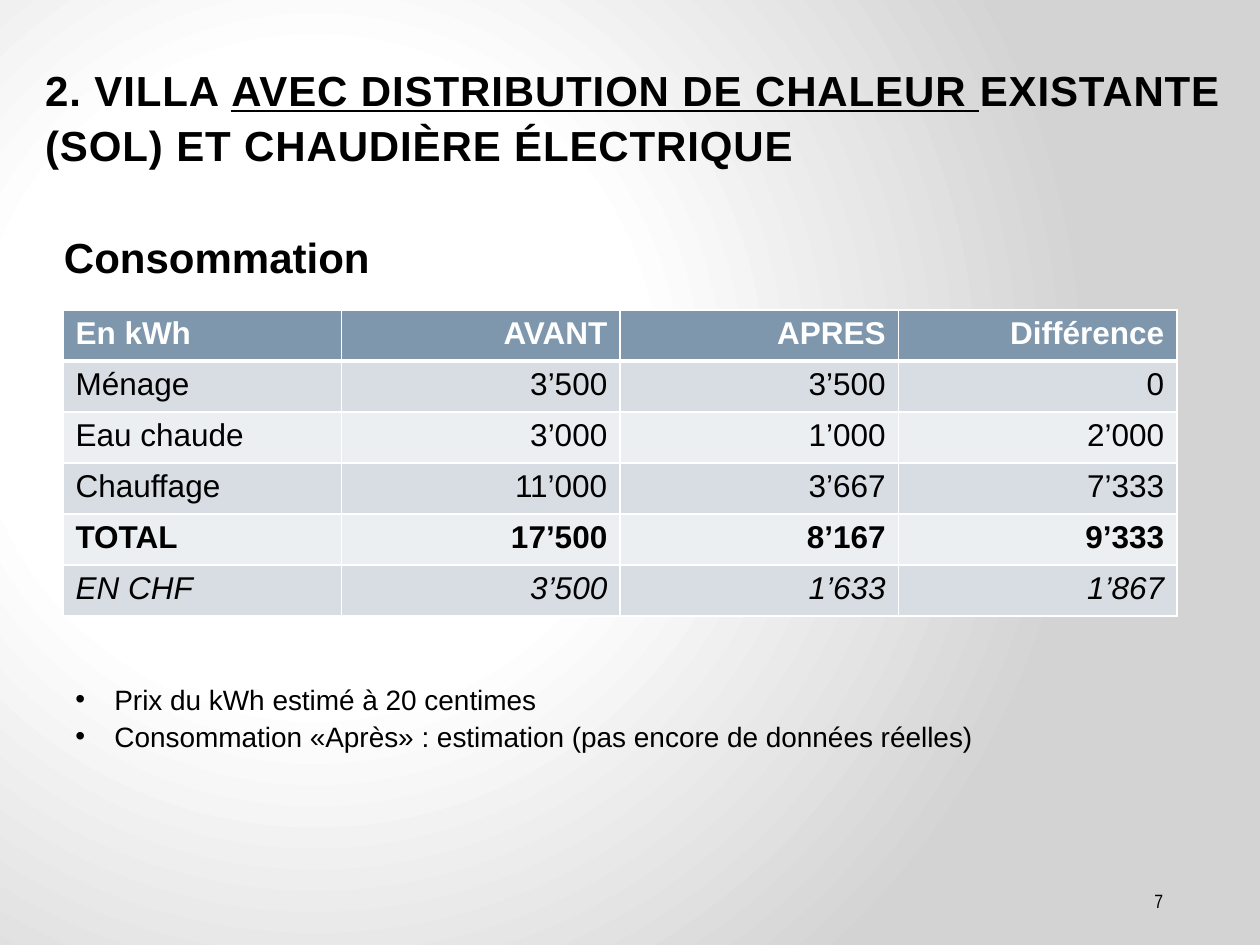
"""Build the slide comparing a villa's energy consumption before and after."""
from pptx import Presentation
from pptx.dml.color import RGBColor
from pptx.enum.text import MSO_ANCHOR as Anchor, PP_ALIGN as Align
from pptx.oxml import parse_xml
from pptx.oxml.ns import nsdecls
from pptx.util import Inches, Pt


def color(value):
    return RGBColor.from_string(value)


def add_run(paragraph, text, size, hue="000000", **formats):
    run = paragraph.add_run()
    run.text = text
    run.font.color.rgb = color(hue)
    for name, value in {"name": "Arial", "size": Pt(size), **formats}.items():
        setattr(run.font, name, value)
    return run


presentation = Presentation()
presentation.slide_width, presentation.slide_height = Inches(10), Inches(7.5)
slide = presentation.slides.add_slide(presentation.slide_layouts[6])

stops = "".join(
    f'<a:gs pos="{position * 1000}"><a:srgbClr val="{hue}"/></a:gs>'
    for position, hue in [(0, "FFFFFF"), (41, "FFFFFF"), (100, "D3D3D3")])
slide.element.cSld.insert(0, parse_xml(
    f'<p:bg {nsdecls("p", "a")}><p:bgPr><a:gradFill rotWithShape="1"><a:gsLst>{stops}</a:gsLst>'
    '<a:path path="circle"><a:fillToRect l="50000" t="80000" r="100000" b="100000"/></a:path>'
    '</a:gradFill><a:effectLst/></p:bgPr></p:bg>'))

boxes = {
    "title": (0.26, 0.15, 9.59, 1.25),
    "number": (8.25, 6.95, 1.08, 0.4),
    "heading": (0.41, 1.75, 8.84, 0.51),
    "notes": (0, 5.34, 9.33, 0.67),
}
frames = {}
for name, place in boxes.items():
    frame = slide.shapes.add_textbox(*map(Inches, place)).text_frame
    frame.word_wrap = True
    frames[name] = frame

frames["title"].vertical_anchor = Anchor.BOTTOM
title = frames["title"].paragraphs[0]
title.line_spacing = 1.1
for text, underline in [("2. VILLA ", False), ("AVEC DISTRIBUTION DE CHALEUR ", True),
                        ("EXISTANTE (SOL) ET CHAUDIÈRE ÉLECTRIQUE", False)]:
    run = add_run(title, text, 24, bold=True, underline=underline)
    run.font._element.set("spc", "50")

frames["number"].vertical_anchor = Anchor.MIDDLE
number = frames["number"].paragraphs[0]
number.alignment = Align.RIGHT
add_run(number, "7", 11, name="Arial Narrow")

heading = frames["heading"].paragraphs[0]
heading.line_spacing = 1.1
add_run(heading, "Consommation", 24, bold=True)

notes = ["Prix du kWh estimé à 20 centimes",
         "Consommation «Après» : estimation (pas encore de données réelles)"]
for index, text in enumerate(notes):
    paragraph = frames["notes"].add_paragraph() if index else frames["notes"].paragraphs[0]
    paragraph.level = 1
    paragraph.line_spacing = 1.1
    properties = paragraph._p.get_or_add_pPr()
    properties.set("marL", str(Inches(0.81)))
    properties.set("indent", str(Inches(-0.31)))
    properties.append(parse_xml(f'<a:buFont {nsdecls("a")} typeface="Arial"/>'))
    properties.append(parse_xml(f'<a:buChar {nsdecls("a")} char="•"/>'))
    add_run(paragraph, text, 16)

rows = [
    ("En kWh", "AVANT", "APRES", "Différence"),
    ("Ménage", "3’500", "3’500", "0"),
    ("Eau chaude", "3’000", "1’000", "2’000"),
    ("Chauffage", "11’000", "3’667", "7’333"),
    ("TOTAL", "17’500", "8’167", "9’333"),
    ("EN CHF", "3’500", "1’633", "1’867"),
]
row_formats = {0: {"hue": "FFFFFF", "bold": True}, 4: {"bold": True}, 5: {"italic": True}}
table = slide.shapes.add_table(len(rows), 4, Inches(0.5), Inches(2.46),
                               Inches(8.84), Inches(2.43)).table
for row_index, values in enumerate(rows):
    fill = "7E97AD" if row_index == 0 else ("ECEFF1", "D8DDE3")[row_index % 2]
    widths = {"L": 1, "R": 1, "T": 3 if row_index == 1 else 1, "B": 3 if row_index == 0 else 1}
    for column_index, text in enumerate(values):
        cell = table.cell(row_index, column_index)
        cell.fill.solid()
        cell.fill.fore_color.rgb = color(fill)
        paragraph = cell.text_frame.paragraphs[0]
        paragraph.alignment = Align.RIGHT if column_index else Align.LEFT
        add_run(paragraph, text, 18, **row_formats.get(row_index, {}))
        for position, (side, width) in enumerate(widths.items()):
            cell._tc.get_or_add_tcPr().insert(position, parse_xml(
                f'<a:ln{side} {nsdecls("a")} w="{Pt(width)}"><a:solidFill>'
                f'<a:srgbClr val="FFFFFF"/></a:solidFill></a:ln{side}>'))

presentation.save("out.pptx")
